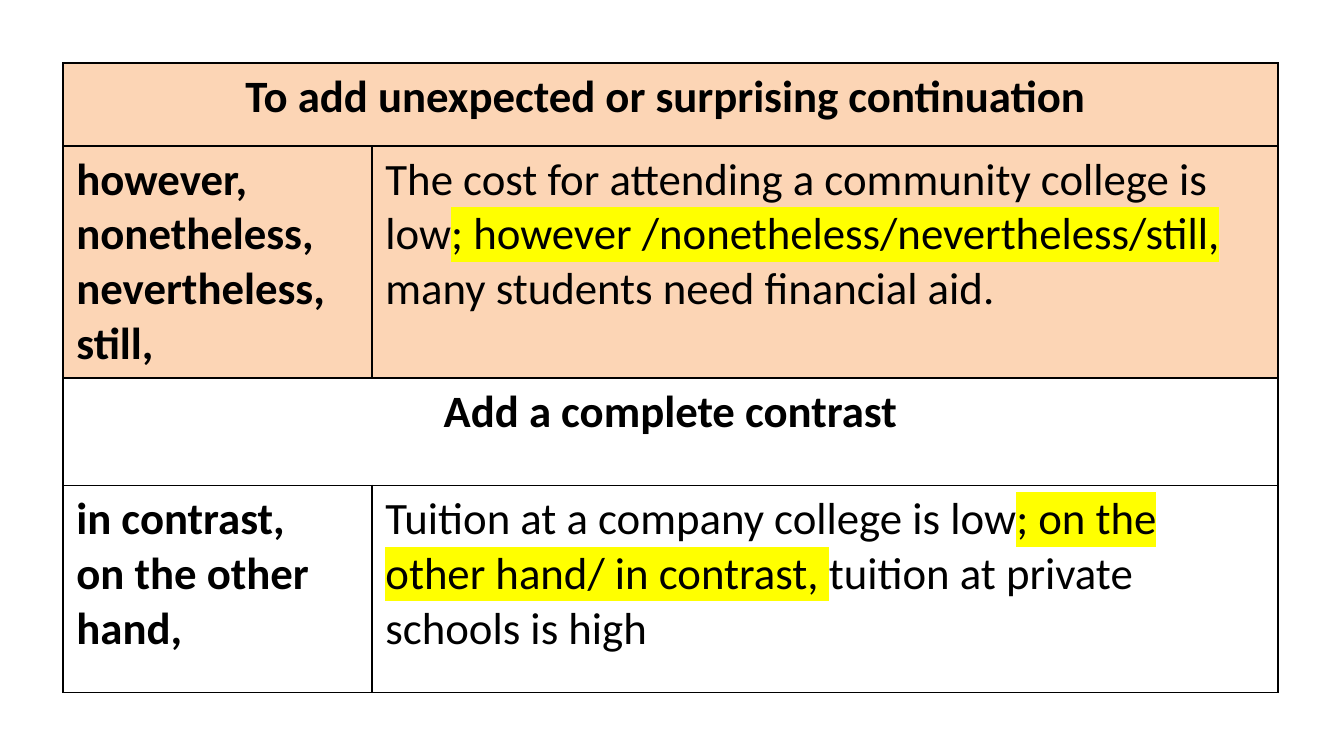
from lxml.etree import SubElement
from pptx import Presentation
from pptx.dml.color import RGBColor
from pptx.enum.text import PP_ALIGN
from pptx.oxml.ns import qn
from pptx.util import Cm, Pt

BLACK = RGBColor(0x00, 0x00, 0x00)
PEACH = RGBColor(0xFC, 0xD5, 0xB5)
YELLOW = RGBColor(0xFF, 0xFF, 0x00)

SECTIONS = [
    {
        "title": "To add unexpected or surprising continuation ",
        "words": ["however, nonetheless, nevertheless, still,"],
        "example": [
            ("The cost for attending a community college is low", None),
            ("; however /nonetheless/nevertheless/still, ", YELLOW),
            ("many students need financial aid.", None),
        ],
        "fill": PEACH,
        "heights": (1.57, 3.91),
    },
    {
        "title": "Add a complete contrast",
        "words": ["in contrast,", "on the other hand,"],
        "example": [
            ("Tuition at a company college is low", None),
            ("; on the other hand/ in contrast, ", YELLOW),
            ("tuition at private schools is high", None),
        ],
        "fill": None,
        "heights": (2.03, 3.91),
    },
]
COLUMNS = (5.84, 17.12)
LEFT, TOP = 1.19, 1.19


def add_run(p, text, bold=False, highlight=None):
    r = p.add_run()
    r.text = text
    r.font.size = Pt(24)
    r.font.bold = bold
    r.font.color.rgb = BLACK
    if highlight is not None:
        mark = SubElement(r.font._element, qn("a:highlight"))
        SubElement(mark, qn("a:srgbClr"), val=str(highlight))
    r.font.name = "Calibri"


def fill_cell(cell, paragraphs, bold=False, align=PP_ALIGN.LEFT):
    tf = cell.text_frame
    for i, runs in enumerate(paragraphs):
        p = tf.add_paragraph() if i else tf.paragraphs[0]
        p.alignment = align
        for text, highlight in runs:
            add_run(p, text, bold=bold, highlight=highlight)


def format_cell(cell, fill):
    tcPr = cell._tc.get_or_add_tcPr()
    for side in ("lnL", "lnR", "lnT", "lnB"):
        ln = SubElement(tcPr, qn(f"a:{side}"), w=str(Pt(1)))
        line_fill = SubElement(ln, qn("a:solidFill"))
        SubElement(line_fill, qn("a:srgbClr"), val=str(BLACK))
    if fill is None:
        cell.fill.background()
    else:
        cell.fill.solid()
        cell.fill.fore_color.rgb = fill


def main():
    prs = Presentation()
    prs.slide_width, prs.slide_height = Cm(25.4), Cm(14.29)
    s = prs.slides.add_slide(prs.slide_layouts[6])

    heights = [h for section in SECTIONS for h in section["heights"]]
    table = s.shapes.add_table(
        len(heights), len(COLUMNS), Cm(LEFT), Cm(TOP), Cm(sum(COLUMNS)), Cm(sum(heights))
    ).table
    table.first_row = table.horz_banding = False
    for column, width in zip(table.columns, COLUMNS):
        column.width = Cm(width)
    for row, height in zip(table.rows, heights):
        row.height = Cm(height)

    for i, section in enumerate(SECTIONS):
        top = 2 * i
        for row in (top, top + 1):
            for col in range(len(COLUMNS)):
                format_cell(table.cell(row, col), section["fill"])
        title = table.cell(top, 0)
        title.merge(table.cell(top, 1))
        fill_cell(title, [[(section["title"], None)]], bold=True, align=PP_ALIGN.CENTER)
        fill_cell(table.cell(top + 1, 0), [[(w, None)] for w in section["words"]], bold=True)
        fill_cell(table.cell(top + 1, 1), [section["example"]])

    prs.save("out.pptx")


if __name__ == "__main__":
    main()
